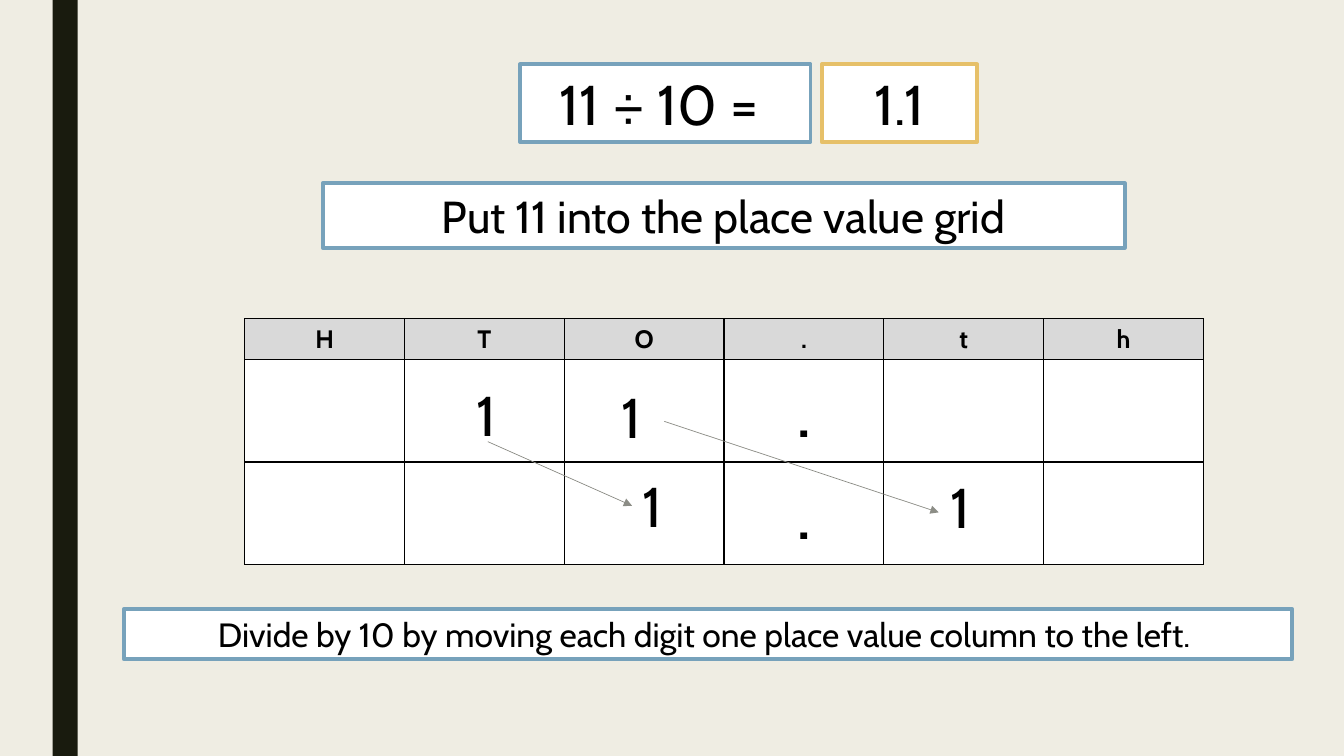
from lxml import etree
from pptx import Presentation
from pptx.dml.color import RGBColor
from pptx.enum.shapes import MSO_CONNECTOR as Connector, MSO_SHAPE as Shape
from pptx.enum.text import MSO_ANCHOR as Anchor, PP_ALIGN as Align
from pptx.oxml.ns import qn
from pptx.util import Pt

FONT = "Cabin"
COLORS = {
    "background": "EFEDE3", "stripe": "191B0E", "text": "000000",
    "white": "FFFFFF", "header": "D9D9D9", "blue": "77A2BB",
    "yellow": "E6C069", "arrow": "8C8D86",
}

# Content: text, size, border, (left, top, width, height)
BOXES = [
    ("11 ÷ 10 = ", 40, "blue", (371.5, 46, 207.5, 55.5)),
    ("1.1", 40, "yellow", (587, 46, 111, 55.5)),
    ("Put 11 into the place value grid", 32, "blue", (230.5, 131, 573, 46)),
    ("Divide by 10 by moving each digit one place value column to the left. ",
     24, "blue", (88.5, 435, 834.5, 36)),
]
GRID = [
    ["H", "T", "O", ".", "t", "h"],
    ["", "", "", ".", "", ""],
    ["", "", "", ".", "", ""],
]
GRID_LEFT, GRID_TOP, GRID_WIDTH = 174.75, 227.75, 685
ROW_HEIGHTS = [29, 73, 73]
DIGIT_SIZE = (38, 55.5)
DIGITS = {  # left, top
    "tens": (333.5, 268.5), "ones": (437, 269.5),
    "moved tens": (451.5, 333.5), "moved ones": (672, 334),
}
# Start, end, digit joined at the end
ARROWS = [
    ((474.5, 301), (670.5, 366), None),
    ((348.5, 315.5), (451.5, 361.5), "moved tens"),
]


def color(name):
    return RGBColor.from_string(COLORS[name])


def paint(fill, name):
    fill.solid()
    fill.fore_color.rgb = color(name)


def write(text_frame, text, size, align=Align.CENTER, bold=False):
    text_frame.text = text
    paragraph = text_frame.paragraphs[0]
    paragraph.alignment = align
    for run in paragraph.runs:
        run.font.name, run.font.size, run.font.bold = FONT, Pt(size), bold
        run.font.color.rgb = color("text")


def add_rectangle(slide, place, fill, border=None):
    shape = slide.shapes.add_shape(Shape.RECTANGLE, *map(Pt, place))
    shape.shadow.inherit = False
    paint(shape.fill, fill)
    if border:
        shape.line.color.rgb = color(border)
        shape.line.width = Pt(2.75)
    else:
        shape.line.fill.background()
    return shape


def add_borders(cell):
    properties = cell._tc.get_or_add_tcPr()
    for index, side in enumerate(("lnL", "lnR", "lnT", "lnB")):
        line = etree.Element(qn(f"a:{side}"), w=str(Pt(1)))
        fill = etree.SubElement(line, qn("a:solidFill"))
        etree.SubElement(fill, qn("a:srgbClr"), val=COLORS["text"])
        properties.insert(index, line)


def add_grid(slide):
    rows, columns = len(GRID), len(GRID[0])
    place = (GRID_LEFT, GRID_TOP, GRID_WIDTH, sum(ROW_HEIGHTS))
    table = slide.shapes.add_table(rows, columns, *map(Pt, place)).table
    for column in table.columns:
        column.width = Pt(GRID_WIDTH / columns)
    for row_index, (texts, height) in enumerate(zip(GRID, ROW_HEIGHTS)):
        table.rows[row_index].height = Pt(height)
        header = row_index == 0
        for column_index, text in enumerate(texts):
            cell = table.cell(row_index, column_index)
            paint(cell.fill, "header" if header else "white")
            write(cell.text_frame, text, 18 if header else 54, bold=header)
            if not header:
                cell.vertical_anchor = Anchor.MIDDLE
            add_borders(cell)


def add_digit(slide, place):
    shape = slide.shapes.add_textbox(*map(Pt, place + DIGIT_SIZE))
    write(shape.text_frame, "1", 40, Align.LEFT)
    shape.text_frame.word_wrap = True
    return shape


def add_arrow(slide, start, end, target):
    arrow = slide.shapes.add_connector(Connector.STRAIGHT, *map(Pt, start + end))
    if target is not None:
        arrow.end_connect(target, 1)
    arrow.line.color.rgb = color("arrow")
    arrow.line.width = Pt(0.5)
    etree.SubElement(arrow.line._get_or_add_ln(), qn("a:tailEnd"), type="triangle")
    etree.SubElement(arrow._element.spPr, qn("a:effectLst"))


def main():
    presentation = Presentation()
    presentation.slide_width, presentation.slide_height = Pt(960), Pt(540)
    slide = presentation.slides.add_slide(presentation.slide_layouts[6])
    paint(slide.background.fill, "background")

    # Side stripe and place value grid
    add_rectangle(slide, (37.5, 0, 18, 540), "stripe")
    add_grid(slide)

    # Sum, answer and instructions
    for text, size, border, place in BOXES:
        shape = add_rectangle(slide, place, "white", border)
        write(shape.text_frame, text, size)
        shape.text_frame.word_wrap = True
        shape.text_frame.vertical_anchor = Anchor.TOP

    # Digits and their moves
    digits = {name: add_digit(slide, place) for name, place in DIGITS.items()}
    for start, end, target in ARROWS:
        add_arrow(slide, start, end, digits.get(target))

    presentation.save("out.pptx")


if __name__ == "__main__":
    main()
